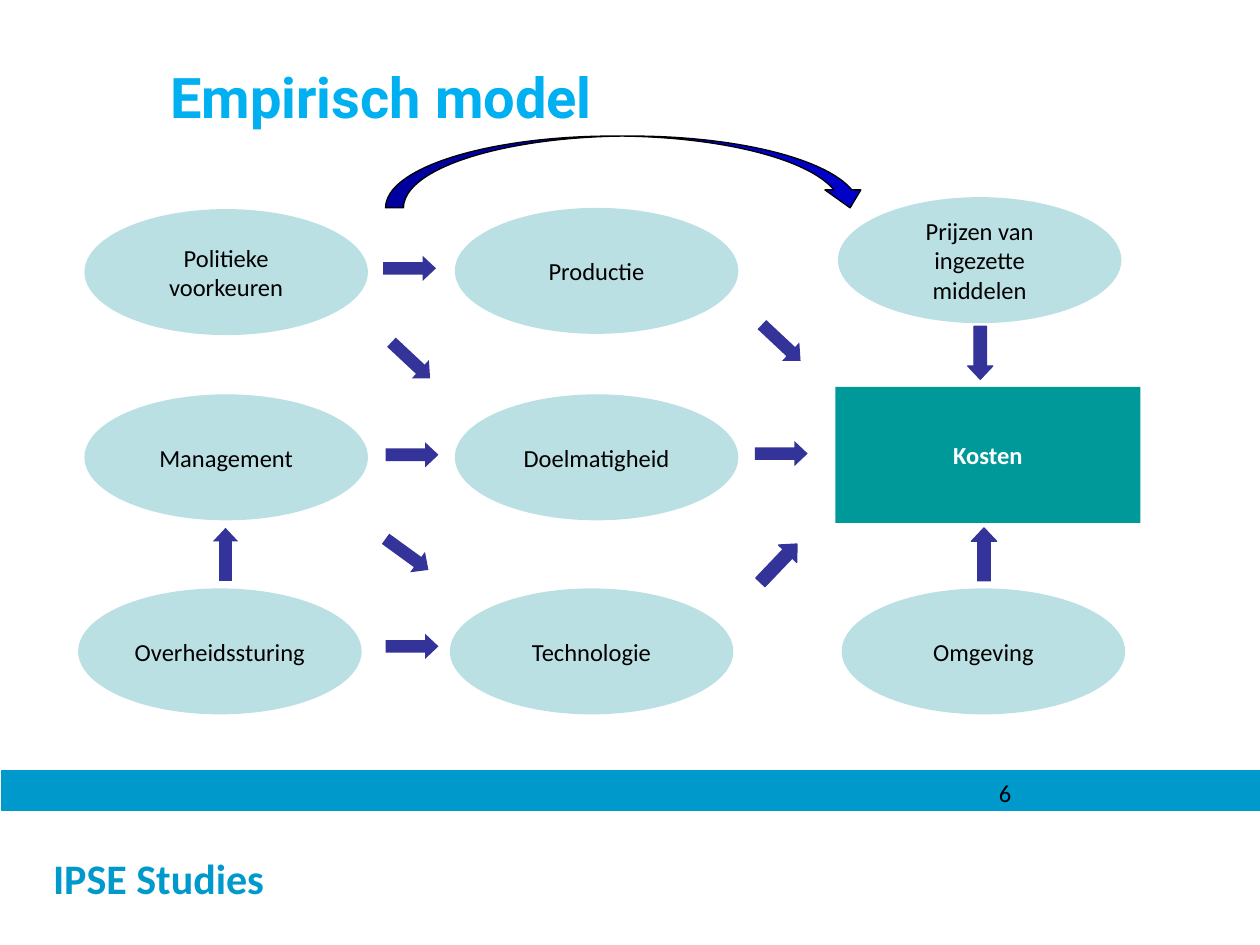
from pptx import Presentation
from pptx.dml.color import RGBColor
from pptx.enum.shapes import MSO_SHAPE
from pptx.enum.text import MSO_ANCHOR, PP_ALIGN
from pptx.util import Pt

OVAL = MSO_SHAPE.OVAL
RECT = MSO_SHAPE.RECTANGLE
ARROW = MSO_SHAPE.RIGHT_ARROW
CURVE = MSO_SHAPE.CURVED_DOWN_ARROW
MIDDLE = MSO_ANCHOR.MIDDLE
LEFT = PP_ALIGN.LEFT
CENTER = PP_ALIGN.CENTER

WHITE = RGBColor(0xFF, 0xFF, 0xFF)
BLACK = RGBColor(0, 0, 0)
CYAN = RGBColor(0x00, 0x99, 0xCC)
SKY = RGBColor(0x00, 0xB0, 0xF0)
PALE = RGBColor(0xBB, 0xE0, 0xE3)
TEAL = RGBColor(0x00, 0x99, 0x99)
INDIGO = RGBColor(0x33, 0x33, 0x99)
BLUE = RGBColor(0x00, 0x00, 0xC8)

OVALS = [
    ("Politieke voorkeuren", 48.24, 119.52),
    ("Productie", 259.92, 118.8),
    ("Prijzen van ingezette middelen", 478.8, 112.68),
    ("Management", 48.24, 225.36),
    ("Doelmatigheid", 259.92, 225.36),
    ("Overheidssturing", 44.64, 336.24),
    ("Technologie", 257.04, 336.24),
    ("Omgeving", 480.96, 336.24),
]

ARROWS = [
    (218.88, 146.16, 0, None),
    (220.32, 252.72, 0, None),
    (220.32, 362.16, 0, None),
    (431.28, 252, 0, None),
    (219.6, 198.72, 43.1, None),
    (431.28, 188.64, 43.1, None),
    (217.44, 309.6, 36, None),
    (429.84, 314.64, 313.7, INDIGO),
    (113.76, 309.6, 270, None),
    (547.2, 309.6, 270, INDIGO),
    (545.04, 194.4, 90, INDIGO),
]


def add_shape(slide, kind, box, fill, line=None):
    shape = slide.shapes.add_shape(kind, *map(Pt, box))
    shape.shadow.inherit = False
    shape.fill.solid()
    shape.fill.fore_color.rgb = fill
    if line is None:
        shape.line.fill.background()
    else:
        shape.line.color.rgb = line
        shape.line.width = Pt(0.75)
    return shape


def set_text(shape, text, size, color, bold=False, align=CENTER, face="Calibri"):
    frame = shape.text_frame
    frame.text = text
    frame.word_wrap = True
    frame.vertical_anchor = MIDDLE
    par = frame.paragraphs[0]
    par.alignment = align
    font = par.runs[0].font
    font.name = face
    font.size = Pt(size)
    font.bold = bold
    font.color.rgb = color


def add_title(slide):
    title = slide.shapes.title
    title.left, title.top = Pt(54), Pt(31.68)
    title.width, title.height = Pt(583.92), Pt(46.08)
    set_text(title, "Empirisch model", 32, SKY, True, LEFT, "Roboto")
    title.text_frame.margin_left = Pt(43.2)


def add_footer(slide):
    foot = add_shape(slide, RECT, (-0.72, 463.68, 720.72, 76.32), WHITE)
    set_text(foot, "IPSE Studies", 24, CYAN, True, LEFT)
    foot.text_frame.margin_left = Pt(31)
    add_shape(slide, RECT, (0.72, 440.64, 720, 22.32), CYAN, CYAN)
    page = slide.shapes.add_textbox(Pt(563.76), Pt(440.64), Pt(149.76), Pt(24.3))
    set_text(page, "6", 14, BLACK, align=LEFT)


def add_oval(slide, text, left, top):
    oval = add_shape(slide, OVAL, (left, top, 162, 72), PALE)
    set_text(oval, text, 14, BLACK)


def add_arrow(slide, left, top, angle, line):
    arrow = add_shape(slide, ARROW, (left, top, 30.24, 14.4), INDIGO, line)
    arrow.adjustments[0] = 0.5
    arrow.adjustments[1] = 0.53
    arrow.rotation = angle


def main():
    deck = Presentation()
    deck.slide_width, deck.slide_height = Pt(720), Pt(540)
    slide = deck.slides.add_slide(deck.slide_layouts[5])
    add_title(slide)
    add_footer(slide)
    for oval in OVALS:
        add_oval(slide, *oval)
    cost = add_shape(slide, RECT, (477.36, 221.04, 174.24, 77.76), TEAL)
    set_text(cost, "Kosten", 14, WHITE, True)
    for arrow in ARROWS:
        add_arrow(slide, *arrow)
    add_shape(slide, CURVE, (220.32, 77.76, 275.76, 41.04), BLUE, BLACK)
    deck.save("out.pptx")


if __name__ == "__main__":
    main()
